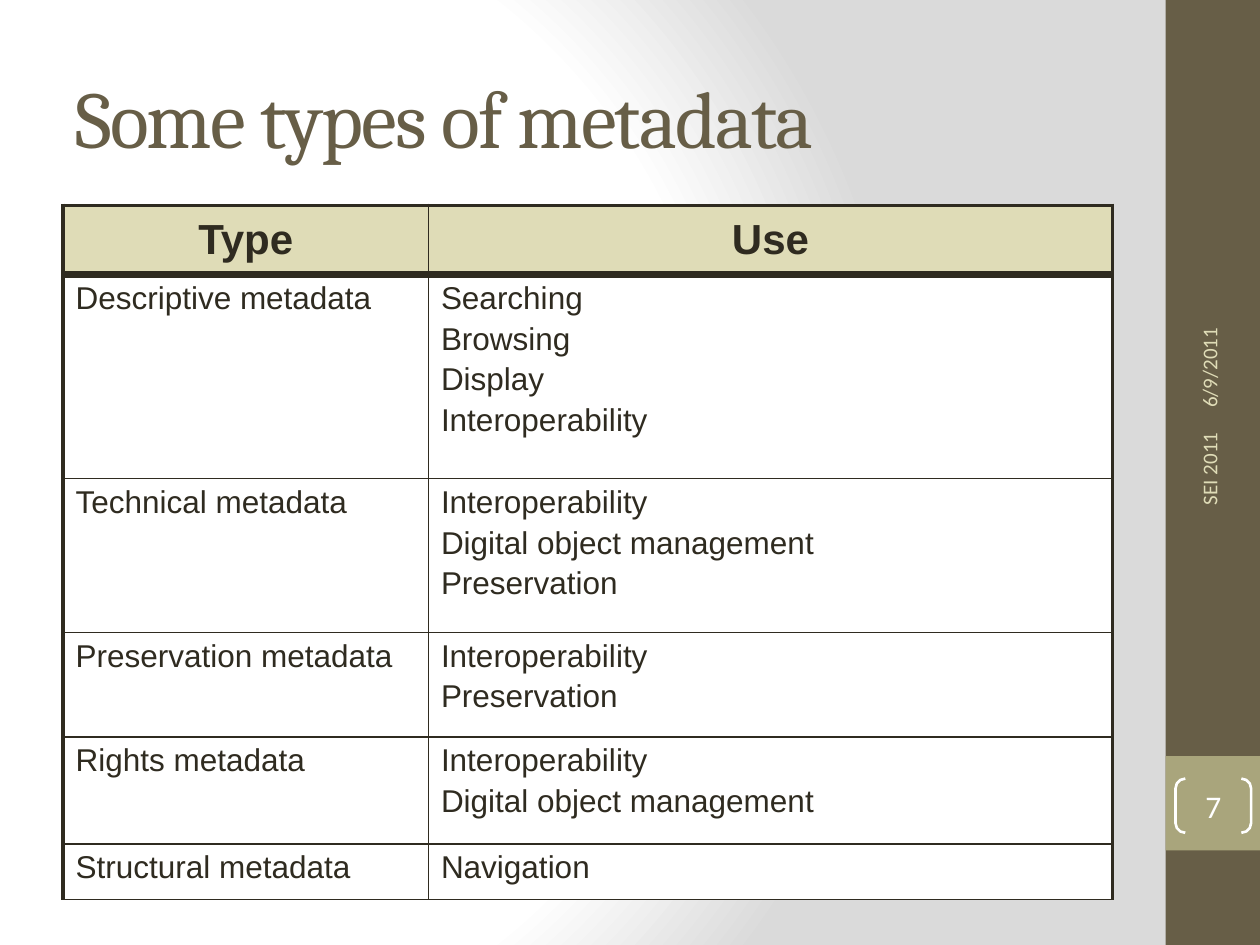
from lxml import etree
from pptx import Presentation
from pptx.dml import color
from pptx.enum import shapes, text
from pptx.oxml import ns
from pptx.util import Inches, Pt

UNIT = 0.1
OLIVE, SAGE, CREAM, INK, WHITE = "675E47", "A9A57C", "DFDCB7", "2F2B20", "FFFFFF"

HEADINGS = ["Type", "Use"]
METADATA_USES = [
    ("Descriptive metadata", ["Searching", "Browsing", "Display", "Interoperability"]),
    ("Technical metadata", ["Interoperability", "Digital object management", "Preservation"]),
    ("Preservation metadata", ["Interoperability", "Preservation"]),
    ("Rights metadata", ["Interoperability", "Digital object management"]),
    ("Structural metadata", ["Navigation"]),
]
COLUMN_WIDTHS = [29, 54.3]
ROW_HEIGHTS = [5.5, 16.2, 12.2, 8.3, 8.5, 4.4]


def rgb(value):
    return color.RGBColor.from_string(value)


def grid(value):
    return Inches(value * UNIT)


def add_node(parent, tag, **attributes):
    return etree.SubElement(parent, ns.qn(tag), {k: str(v) for k, v in attributes.items()})


class SlideBuilder:
    TITLE = dict(size=Pt(46), name="Cambria", color=OLIVE)
    HEADING = dict(size=Pt(24), name="Arial", color=INK, bold=True)
    BODY = dict(size=Pt(18), name="Arial", color=INK, bold=False)
    FOOTER = dict(size=Pt(12), name="Calibri", color=CREAM)
    NUMBER = dict(size=Pt(18), name="Calibri", color=WHITE)

    def __init__(self, presentation):
        self.slide = presentation.slides.add_slide(presentation.slide_layouts[6])

    def background(self, stops, focus):
        fill = self.slide.background.fill
        fill.solid()
        properties = self.slide._element.find(".//" + ns.qn("p:bgPr"))
        properties.remove(properties.find(ns.qn("a:solidFill")))
        gradient = etree.Element(ns.qn("a:gradFill"), rotWithShape="1")
        stop_list = add_node(gradient, "a:gsLst")
        for position, value in stops:
            stop = add_node(stop_list, "a:gs", pos=position * 1000)
            add_node(stop, "a:srgbClr", val=value)
        circle = add_node(gradient, "a:path", **{"path": "circle"})
        add_node(circle, "a:fillToRect", **{side: share * 1000 for side, share in focus.items()})
        properties.insert(0, gradient)

    def add_lines(self, frame, lines, style, align=text.PP_ALIGN.LEFT, gap=0):
        for index, line in enumerate(lines):
            paragraph = frame.add_paragraph() if index else frame.paragraphs[0]
            paragraph.alignment = align
            if index:
                paragraph.space_before = Pt(gap)
            run = paragraph.add_run()
            run.text = line
            for key, value in style.items():
                if key == "color":
                    run.font.color.rgb = rgb(value)
                else:
                    setattr(run.font, key, value)

    def shape(self, kind, box, fill=None, line=None):
        shape = self.slide.shapes.add_shape(kind, *map(grid, box))
        shape.shadow.inherit = False
        for part, value in ((shape.fill, fill), (shape.line.fill, line)):
            if value:
                part.solid()
                part.fore_color.rgb = rgb(value)
            else:
                part.background()
        return shape

    def label(self, box, line, style, align=text.PP_ALIGN.LEFT, rotation=0):
        shape = self.slide.shapes.add_textbox(*map(grid, box))
        shape.rotation = rotation
        shape.text_frame.word_wrap = True
        shape.text_frame.vertical_anchor = text.MSO_ANCHOR.MIDDLE
        self.add_lines(shape.text_frame, [line], style, align)
        return shape

    def page_number(self, box, number):
        shape = self.shape(shapes.MSO_SHAPE.DOUBLE_BRACKET, box, line=WHITE)
        shape.adjustments[0] = 0.18
        shape.line.width = Pt(1.5)
        frame = shape.text_frame
        for side in ("left", "top", "right", "bottom"):
            setattr(frame, "margin_" + side, 0)
        frame.vertical_anchor = text.MSO_ANCHOR.MIDDLE
        self.add_lines(frame, [number], self.NUMBER, text.PP_ALIGN.CENTER)

    def borders(self, cell, **widths):
        properties = cell._tc.get_or_add_tcPr()
        for side, width in widths.items():
            line = add_node(properties, "a:ln" + side, w=int(Pt(width)))
            add_node(add_node(line, "a:solidFill"), "a:srgbClr", val=INK)

    def table(self, left, top, widths, heights, headings, records):
        box = (left, top, sum(widths), sum(heights))
        table = self.slide.shapes.add_table(len(heights), len(widths), *map(grid, box)).table
        table.horz_banding = False
        for column, width in zip(table.columns, widths):
            column.width = grid(width)
        for row, height in zip(table.rows, heights):
            row.height = grid(height)
        contents = [[[heading] for heading in headings]]
        contents += [[[kind], uses] for kind, uses in records]
        last = len(widths) - 1
        for r, record in enumerate(contents):
            for c, lines in enumerate(record):
                cell = table.cell(r, c)
                self.borders(cell, L=1 if c else 2.25, R=2.25 if c == last else 1,
                             T={0: 2.25, 1: 4.5}.get(r, 1), B=1 if r else 4.5)
                cell.fill.solid()
                cell.fill.fore_color.rgb = rgb(WHITE if r else CREAM)
                if r:
                    self.add_lines(cell.text_frame, lines, self.BODY, gap=3.1)
                else:
                    cell.vertical_anchor = text.MSO_ANCHOR.MIDDLE
                    self.add_lines(cell.text_frame, lines, self.HEADING, text.PP_ALIGN.CENTER)


def main():
    presentation = Presentation()
    presentation.slide_width, presentation.slide_height = grid(100), grid(75)
    builder = SlideBuilder(presentation)
    builder.background([(0, WHITE), (75, WHITE), (100, "DADADA")], dict(l=20, t=50, r=100, b=50))
    builder.shape(shapes.MSO_SHAPE.RECTANGLE, (92.5, 0, 7.5, 75), OLIVE)
    builder.shape(shapes.MSO_SHAPE.RECTANGLE, (92.5, 60, 7.5, 7.5), SAGE)
    title = builder.label((5, 3, 83.3, 12.5), "Some types of metadata", builder.TITLE)
    title.text_frame.paragraphs[0].runs[0]._r.get_or_add_rPr().set("spc", "-100")
    builder.table(5, 16.3, COLUMN_WIDTHS, ROW_HEIGHTS, HEADINGS, METADATA_USES)
    builder.label((82.6, 18, 26.7, 4), "6/9/2011", builder.FOOTER, rotation=270)
    builder.label((83, 44.3, 25.9, 4), "SEI 2011", builder.FOOTER, text.PP_ALIGN.RIGHT, 270)
    builder.page_number((93.3, 61.8, 6, 4.3), "7")
    presentation.save("out.pptx")


if __name__ == "__main__":
    main()
